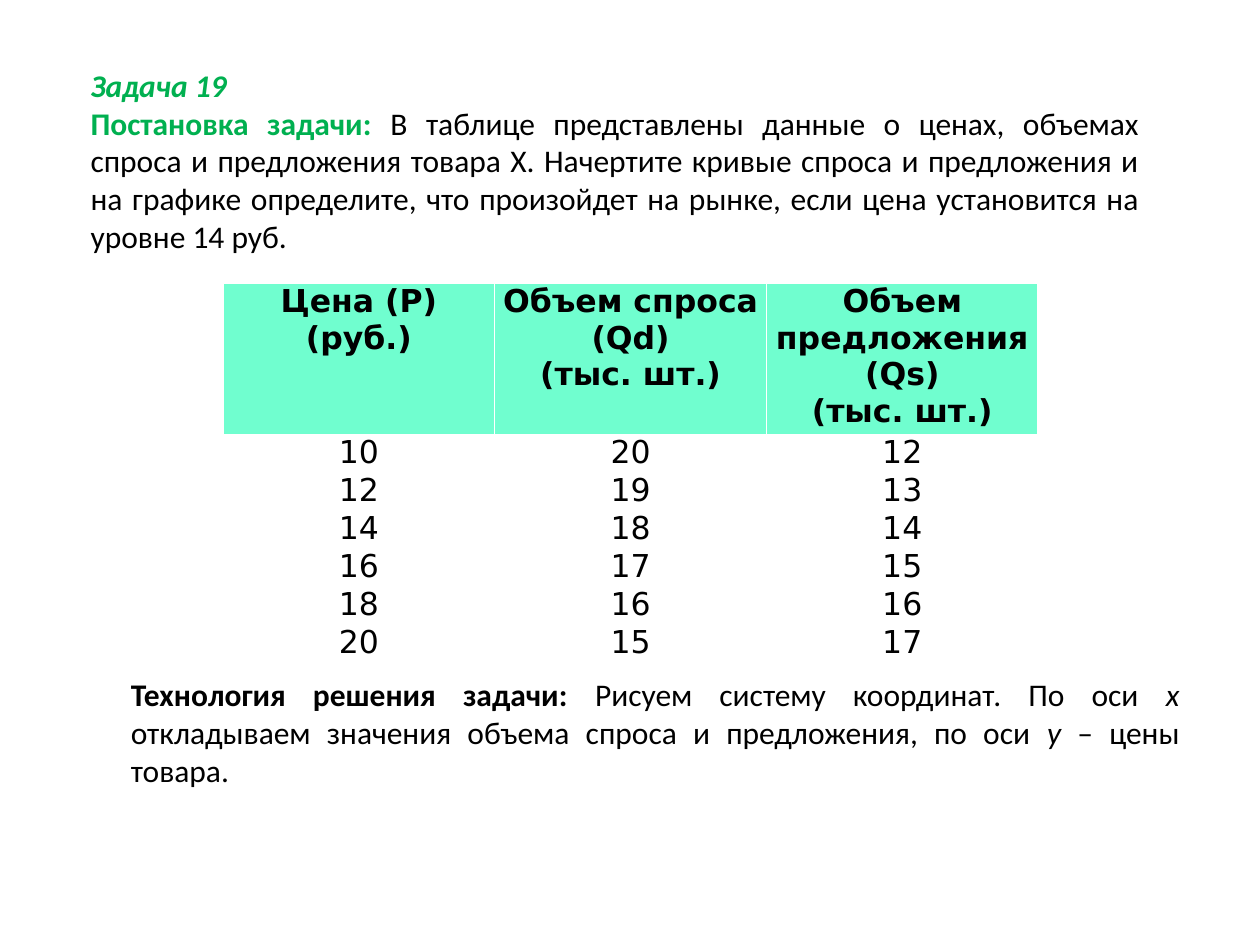
import pptx
import pptx.util
import pptx.dml.color
import pptx.enum.text

HUES = {"ink": "000000", "green": "00B050", "mint": "70FECF"}
ALIGN = pptx.enum.text.PP_ALIGN


class Page:
    wide, high = 10, 7.5
    text_face, grid_face = "Calibri", "DejaVu Sans"
    size = 18

    def __init__(self):
        self.deck = pptx.Presentation()
        self.deck.slide_width = pptx.util.Inches(self.wide)
        self.deck.slide_height = pptx.util.Inches(self.high)
        self.slide = self.deck.slides.add_slide(self.deck.slide_layouts[6])

    def box(self, left, top, width, height):
        shares = ((left, self.wide), (top, self.high), (width, self.wide), (height, self.high))
        return [pptx.util.Inches(share * side) for share, side in shares]

    def paint(self, font, hue="ink", bold=False, slant=False):
        font.color.rgb = pptx.dml.color.RGBColor.from_string(HUES[hue])
        font.bold, font.italic = bold, slant

    def set_par(self, par, face, align):
        par.alignment = align
        par.font.name, par.font.size = face, pptx.util.Pt(self.size)

    def text(self, place, pars):
        frame = self.slide.shapes.add_textbox(*self.box(*place)).text_frame
        frame.word_wrap = True
        frame.auto_size = pptx.enum.text.MSO_AUTO_SIZE.SHAPE_TO_FIT_TEXT
        for index, (align, parts) in enumerate(pars):
            par = frame.add_paragraph() if index else frame.paragraphs[0]
            self.set_par(par, self.text_face, align)
            for words, style in parts:
                run = par.add_run()
                run.text = words
                self.paint(run.font, **style)

    def table(self, place, rows, head_share):
        shape = self.slide.shapes.add_table(len(rows), len(rows[0]), *self.box(*place))
        grid = shape.table
        grid.first_row = grid.horz_banding = False
        head = int(shape.height * head_share)
        body = (shape.height - head) // (len(rows) - 1)
        for r, row in enumerate(rows):
            grid.rows[r].height = body if r else head
            for c, value in enumerate(row):
                self.cell(grid.cell(r, c), str(value), r == 0)

    def cell(self, cell, words, head):
        cell.margin_left = cell.margin_right = cell.margin_top = cell.margin_bottom = 0
        if head:
            cell.fill.solid()
            cell.fill.fore_color.rgb = pptx.dml.color.RGBColor.from_string(HUES["mint"])
        else:
            cell.fill.background()
        par = cell.text_frame.paragraphs[0]
        par.text = words
        self.set_par(par, self.grid_face, ALIGN.CENTER)
        self.paint(par.font, bold=head)


def main():
    page = Page()
    plain, bold, slant = {}, {"bold": True}, {"slant": True}
    page.text((0.062, 0.063, 0.852, 0.216), [
        (ALIGN.LEFT, [("Задача 19", {"hue": "green", "bold": True, "slant": True})]),
        (ALIGN.JUSTIFY, [
            ("Постановка задачи: ", {"hue": "green", "bold": True}),
            ("В таблице представлены данные о ценах, объемах спроса и предложения "
             "товара Х. Начертите кривые спроса и предложения и на графике определите, "
             "что произойдет на рынке, если цена установится на уровне 14 руб.", plain),
        ]),
    ])
    heads = ("Цена (Р)\n(руб.)", "Объем спроса (Qd)\n(тыс. шт.)",
             "Объем предложения (Qs)\n(тыс. шт.)")
    data = [(10 + 2 * step, 20 - step, 12 + step) for step in range(6)]
    page.table((0.177, 0.3, 0.647, 0.4), [heads, *data], 0.4)
    page.text((0.094, 0.708, 0.852, 0.135), [
        (ALIGN.JUSTIFY, [
            ("Технология решения задачи: ", bold),
            ("Рисуем систему координат. По оси ", plain),
            ("х", slant),
            (" откладываем значения объема спроса и предложения, по оси ", plain),
            ("у", slant),
            (" – цены товара.", plain),
        ]),
    ])
    page.deck.save("out.pptx")


if __name__ == "__main__":
    main()
